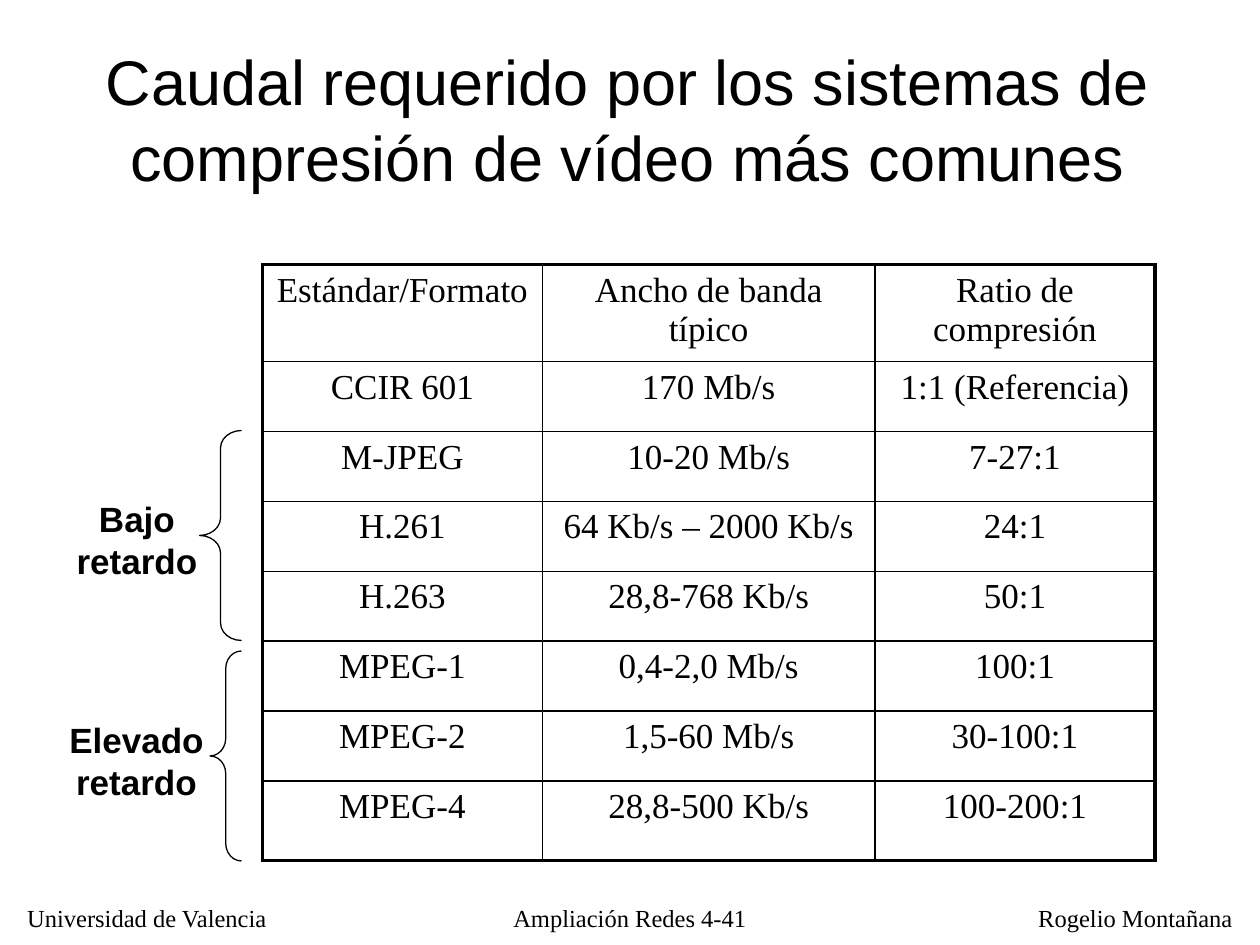
from dataclasses import dataclass

from lxml import etree
from pptx import Presentation
from pptx.dml.color import RGBColor
from pptx.enum.shapes import MSO_SHAPE
from pptx.enum.text import MSO_ANCHOR, PP_ALIGN
from pptx.oxml.ns import qn
from pptx.util import Inches, Pt

BLACK = RGBColor(0, 0, 0)
WHITE = RGBColor(255, 255, 255)
SANS, SERIF = "Arial", "Times New Roman"
LEFT, CENTER = PP_ALIGN.LEFT, PP_ALIGN.CENTER
TOP, MIDDLE = MSO_ANCHOR.TOP, MSO_ANCHOR.MIDDLE
LEFT_BRACE = MSO_SHAPE.LEFT_BRACE

# The slide is a grid of 120 columns by 90 rows.
COLUMNS, ROWS = 120, 90
UNIT = Inches(10) / COLUMNS

TABLE_LEFT, TABLE_TOP = 25, 25.2
COLUMN_WIDTHS = (26.65, 31.7, 26.65)
ROW_HEIGHTS = (9.24, *[6.66] * 6, 7.56)
THIN, THICK = 1, 2.25
STANDARDS = (
    ("Estándar/Formato", "Ancho de banda típico", "Ratio de compresión"),
    ("CCIR 601", "170 Mb/s", "1:1 (Referencia)"),
    ("M-JPEG", "10-20 Mb/s", "7-27:1"),
    ("H.261", "64 Kb/s – 2000 Kb/s", "24:1"),
    ("H.263", "28,8-768 Kb/s", "50:1"),
    ("MPEG-1", "0,4-2,0 Mb/s", "100:1"),
    ("MPEG-2", "1,5-60 Mb/s", "30-100:1"),
    ("MPEG-4", "28,8-500 Kb/s", "100-200:1"),
)


@dataclass(frozen=True)
class Box:
    left: float
    top: float
    width: float
    height: float

    def lengths(self) -> tuple[int, ...]:
        return tuple(grid(value) for value in (self.left, self.top, self.width, self.height))


@dataclass(frozen=True)
class Label:
    box: Box
    lines: tuple[str, ...]
    size: float
    font: str
    align: PP_ALIGN = CENTER
    bold: bool = False
    wrap: bool = False
    anchor: MSO_ANCHOR = TOP


@dataclass(frozen=True)
class Brace:
    box: Box
    curve: float


FOOTER_TOP = 85.4
LABELS = (
    Label(Box(1.4, FOOTER_TOP, 25.6, 4), ("Universidad de Valencia",), 14, SERIF, LEFT),
    Label(Box(97.7, FOOTER_TOP, 20.9, 4), ("Rogelio Montañana",), 14, SERIF, LEFT),
    Label(Box(46.8, FOOTER_TOP, 26.4, 4), ("Ampliación Redes 4-41",), 14, SERIF, wrap=True),
    Label(Box(3.7, 3.4, 112.1, 15.7),
          ("Caudal requerido por los sistemas de compresión de vídeo más comunes",),
          36, SANS, wrap=True, anchor=MIDDLE),
    Label(Box(6.1, 46.8, 13.9, 9.2), ("Bajo", "retardo"), 20, SANS, bold=True),
    Label(Box(5.4, 67.8, 15.2, 9.2), ("Elevado", "retardo"), 20, SANS, bold=True),
)
BRACES = (
    Brace(Box(19, 41, 4, 20), 0.417),
    Brace(Box(20, 62, 3, 20), 0.556),
)


def grid(value: float) -> int:
    return round(value * UNIT)


def write_line(paragraph, text: str, size: float, font: str, align: PP_ALIGN, bold: bool = False) -> None:
    paragraph.alignment = align
    run = paragraph.add_run()
    run.text = text
    run.font.size = Pt(size)
    run.font.name = font
    run.font.bold = bold
    run.font.color.rgb = BLACK


def add_label(slide, label: Label) -> None:
    frame = slide.shapes.add_textbox(*label.box.lengths()).text_frame
    frame.word_wrap = label.wrap
    frame.vertical_anchor = label.anchor
    for index, line in enumerate(label.lines):
        paragraph = frame.add_paragraph() if index else frame.paragraphs[0]
        write_line(paragraph, line, label.size, label.font, label.align, label.bold)


def add_brace(slide, brace: Brace) -> None:
    shape = slide.shapes.add_shape(LEFT_BRACE, *brace.box.lengths())
    shape.adjustments[0] = brace.curve
    shape.adjustments[1] = 0.5
    shape.shadow.inherit = False
    shape.fill.background()
    shape.line.color.rgb = BLACK
    shape.line.width = Pt(0.75)


def set_borders(cell, widths: dict[str, float]) -> None:
    """Border elements come before the fill in the cell properties."""
    properties = cell._tc.get_or_add_tcPr()
    for index, (side, width) in enumerate(widths.items()):
        line = etree.Element(qn(f"a:ln{side}"), w=str(Pt(width)))
        fill = etree.SubElement(line, qn("a:solidFill"))
        etree.SubElement(fill, qn("a:srgbClr"), val=str(BLACK))
        properties.insert(index, line)


def add_standards_table(slide) -> None:
    box = Box(TABLE_LEFT, TABLE_TOP, sum(COLUMN_WIDTHS), sum(ROW_HEIGHTS))
    last_row, last_column = len(ROW_HEIGHTS) - 1, len(COLUMN_WIDTHS) - 1
    table = slide.shapes.add_table(last_row + 1, last_column + 1, *box.lengths()).table
    table.first_row = table.horz_banding = False
    for column, width in zip(table.columns, COLUMN_WIDTHS):
        column.width = grid(width)
    for row, height in zip(table.rows, ROW_HEIGHTS):
        row.height = grid(height)
    for r, values in enumerate(STANDARDS):
        for c, value in enumerate(values):
            cell = table.cell(r, c)
            cell.fill.background()
            write_line(cell.text_frame.paragraphs[0], value, 20, SERIF, CENTER)
            set_borders(cell, {
                "L": THICK if c == 0 else THIN,
                "R": THICK if c == last_column else THIN,
                "T": THICK if r == 0 else THIN,
                "B": THICK if r == last_row else THIN,
            })


def main() -> None:
    presentation = Presentation()
    presentation.slide_width = grid(COLUMNS)
    presentation.slide_height = grid(ROWS)
    slide = presentation.slides.add_slide(presentation.slide_layouts[6])
    slide.background.fill.solid()
    slide.background.fill.fore_color.rgb = WHITE
    add_standards_table(slide)
    for brace in BRACES:
        add_brace(slide, brace)
    for label in LABELS:
        add_label(slide, label)
    presentation.save("out.pptx")


if __name__ == "__main__":
    main()
